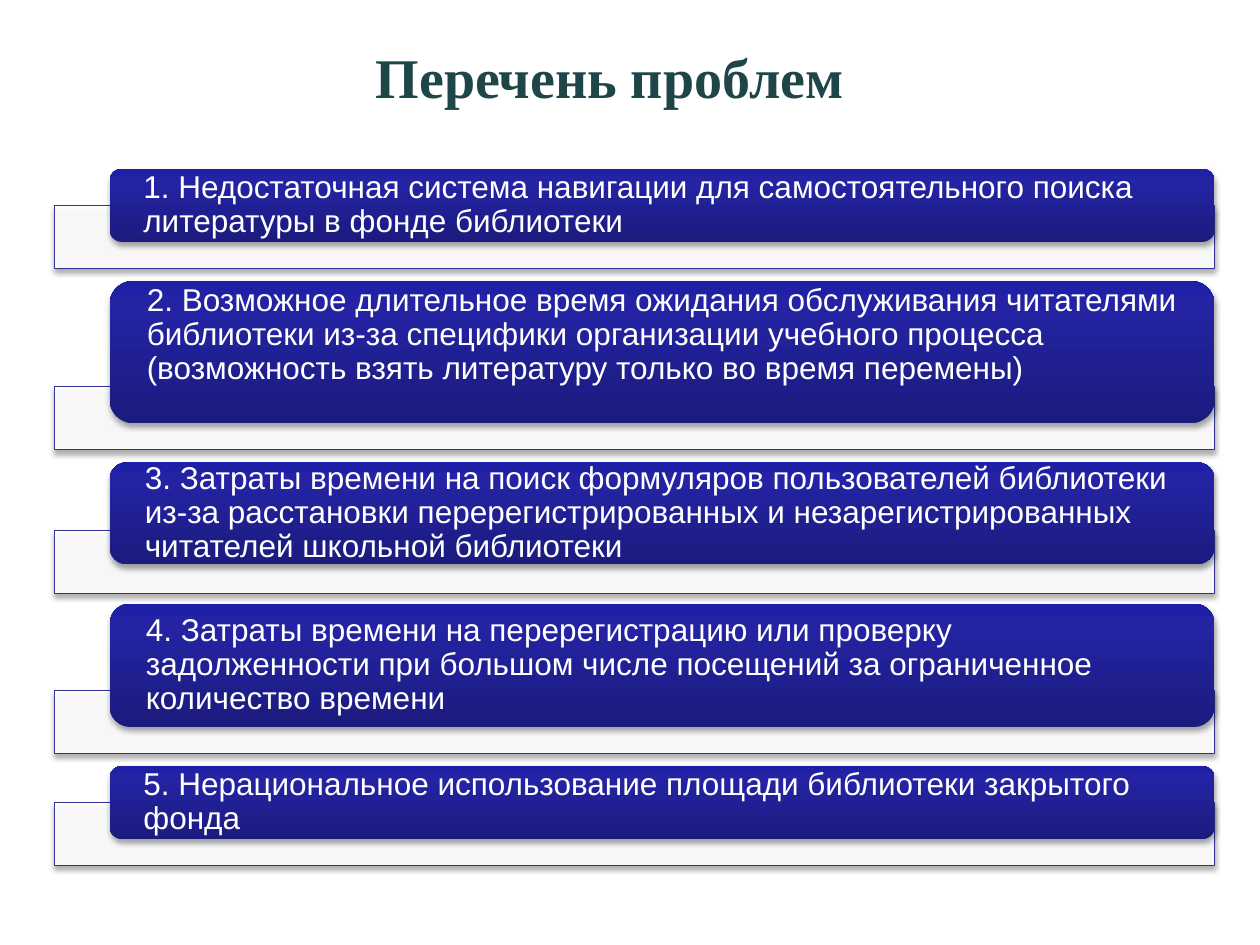
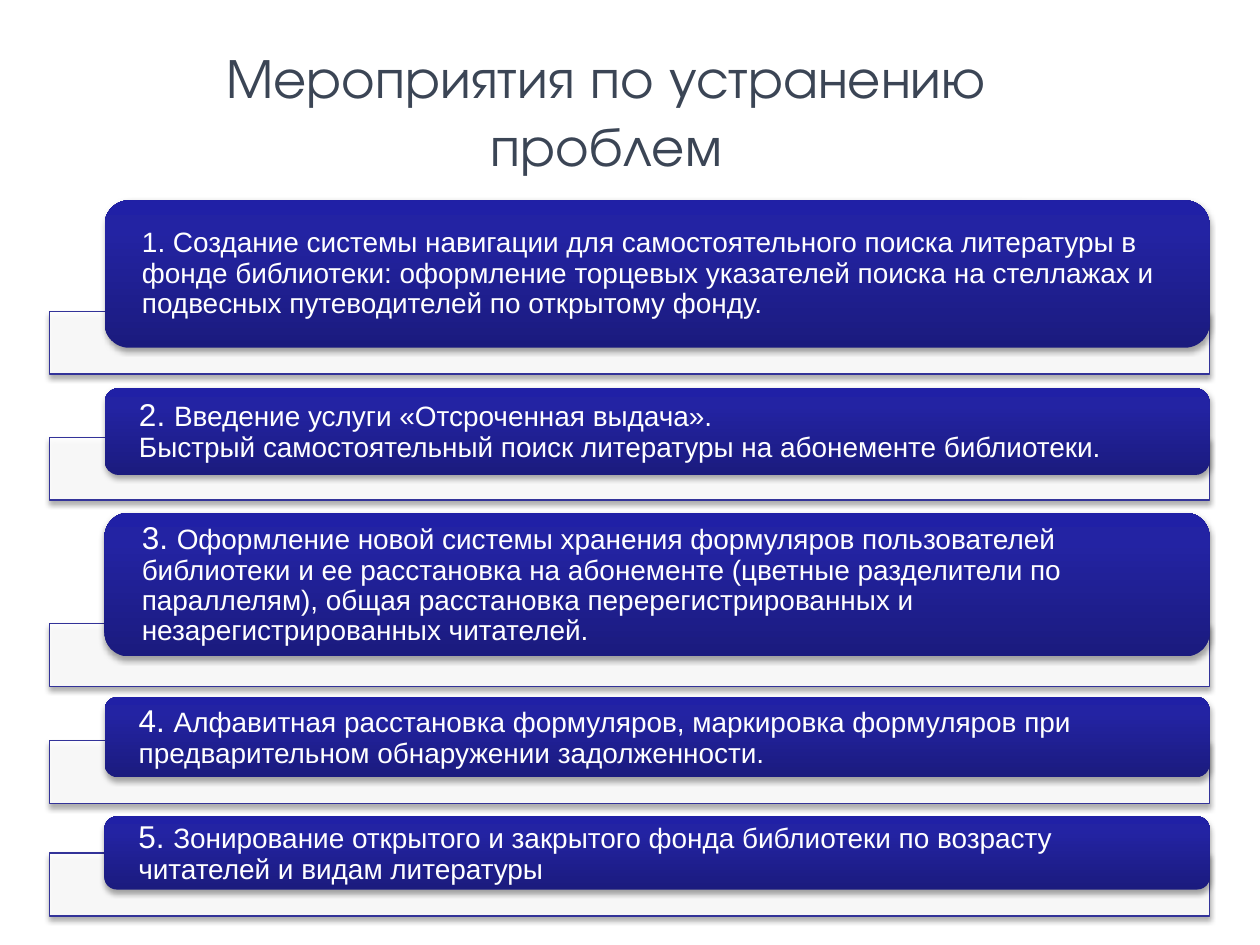
from copy import deepcopy
from dataclasses import dataclass
from typing import Any

from lxml.etree import SubElement
from pptx import Presentation
from pptx.dml.color import RGBColor
from pptx.enum.shapes import MSO_SHAPE
from pptx.enum.text import MSO_ANCHOR, MSO_AUTO_SIZE, PP_ALIGN
from pptx.oxml.ns import qn
from pptx.util import Inches, Pt

WHITE = "FFFFFF"
EDGE = "333399"
STOPS = ((0, "1B1B7E"), (0.8, "2323A3"), (1, "2020A6"))
INDENT = 0.44
BOX_WIDTH = 8.77
BAR_WIDTH = 9.21
BAR_HEIGHT = 0.5

TITLE_FRAME = {
    "word_wrap": True,
    "auto_size": MSO_AUTO_SIZE.NONE,
    "vertical_anchor": MSO_ANCHOR.TOP,
}
BOX_FRAME = {
    "word_wrap": True,
    "vertical_anchor": MSO_ANCHOR.MIDDLE,
    "margin_left": Inches(0.24),
    "margin_right": Inches(0.24),
    "margin_top": Inches(0),
}


@dataclass
class Item:
    top: float
    height: float
    text: str
    lap: float = 0.29
    foot: float = 0
    lead: str = ""


@dataclass
class Page:
    title: str
    spot: tuple[float, float, float, float]
    font: dict[str, Any]
    color: str
    left: float
    size: int
    items: list[Item]


PAGES = [
    Page(
        "Перечень проблем",
        (1.06, 0.29, 7.56, 1.04),
        {"name": "Times New Roman", "size": Pt(32), "bold": True},
        "1E4649",
        0.43,
        18,
        [
            Item(1.34, 0.58, "1. Недостаточная система навигации для самостоятельного "
                 "поиска литературы в фонде библиотеки"),
            Item(2.23, 1.13, "2. Возможное длительное время ожидания обслуживания "
                 "читателями библиотеки из-за специфики организации учебного процесса "
                 "(возможность взять литературу только во время перемены)", foot=0.27),
            Item(3.67, 0.81, "3. Затраты времени на поиск формуляров пользователей "
                 "библиотеки из-за расстановки перерегистрированных и "
                 "незарегистрированных читателей школьной библиотеки", lap=0.27),
            Item(4.79, 0.98, "4. Затраты времени на перерегистрацию или проверку "
                 "задолженности при большом числе посещений за ограниченное "
                 "количество времени"),
            Item(6.08, 0.58, "5. Нерациональное использование площади библиотеки "
                 "закрытого фонда"),
        ],
    ),
    Page(
        "Мероприятия по устранению проблем",
        (0.91, 0.29, 7.81, 0.64),
        {"name": "TeX Gyre Adventor", "size": Pt(32), "bold": False},
        "3B4555",
        0.39,
        16,
        [
            Item(1.59, 1.17, "1. Создание системы навигации для самостоятельного "
                 "поиска литературы в фонде библиотеки: оформление торцевых указателей "
                 "поиска на стеллажах и подвесных путеводителей по открытому фонду."),
            Item(3.08, 0.69, "Введение услуги «Отсроченная выдача».\n"
                 "Быстрый самостоятельный поиск литературы на абонементе библиотеки.",
                 lap=0.3, lead="2. "),
            Item(4.07, 1.14, "Оформление новой системы хранения формуляров "
                 "пользователей библиотеки и ее расстановка на абонементе (цветные "
                 "разделители по параллелям), общая расстановка перерегистрированных и "
                 "незарегистрированных читателей.", lap=0.26, lead="3. "),
            Item(5.53, 0.64, "Алфавитная расстановка формуляров, маркировка формуляров "
                 "при предварительном обнаружении задолженности.", lead="4. "),
            Item(6.48, 0.58, "Зонирование открытого и закрытого фонда библиотеки по "
                 "возрасту читателей и видам литературы", lead="5. "),
        ],
    ),
]


def apply(target: Any, values: dict[str, Any]) -> None:
    for name, value in values.items():
        setattr(target, name, value)


def paint(target: Any, color: str) -> None:
    target.rgb = RGBColor.from_string(color)


def place(slide: Any, kind: Any, spot: tuple[float, ...]) -> Any:
    shape = slide.shapes.add_shape(kind, *map(Inches, spot))
    shape.shadow.inherit = False
    return shape


def shade(shape: Any) -> None:
    effects = shape._element.spPr.find(qn("a:effectLst"))
    cast = SubElement(effects, qn("a:outerShdw"), blurRad="40000", dist="23000",
                      dir="5400000", rotWithShape="0")
    black = SubElement(cast, qn("a:srgbClr"), val="000000")
    SubElement(black, qn("a:alpha"), val="35000")


def blend(shape: Any) -> None:
    fill = shape.fill
    fill.gradient()
    fill.gradient_angle = 90
    stops = shape._element.spPr.find(qn("a:gradFill")).find(qn("a:gsLst"))
    stops.append(deepcopy(stops[-1]))
    for stop, (point, color) in zip(fill.gradient_stops, STOPS):
        stop.position = point
        paint(stop.color, color)


def draw_bar(slide: Any, left: float, top: float) -> None:
    bar = place(slide, MSO_SHAPE.RECTANGLE, (left, top, BAR_WIDTH, BAR_HEIGHT))
    bar.fill.solid()
    paint(bar.fill.fore_color, WHITE)
    tone = bar._element.spPr.find(qn("a:solidFill"))[0]
    SubElement(tone, qn("a:alpha"), val="90000")
    paint(bar.line.color, EDGE)
    bar.line.width = Pt(0.75)
    shade(bar)


def add_run(para: Any, text: str, size: int) -> None:
    run = para.add_run()
    run.text = text
    apply(run.font, {"name": "Arial", "size": Pt(size)})
    paint(run.font.color, WHITE)


def draw_box(slide: Any, left: float, item: Item, size: int) -> None:
    box = place(slide, MSO_SHAPE.ROUNDED_RECTANGLE,
                (left, item.top, BOX_WIDTH, item.height))
    blend(box)
    box.line.fill.background()
    shade(box)
    frame = box.text_frame
    apply(frame, BOX_FRAME | {"margin_bottom": Inches(item.foot)})
    for rank, text in enumerate(item.text.split("\n")):
        para = frame.add_paragraph() if rank else frame.paragraphs[0]
        apply(para, {"alignment": PP_ALIGN.LEFT, "line_spacing": 0.9})
        if item.lead and not rank:
            add_run(para, item.lead, 18)
        add_run(para, text, size)


def draw_title(slide: Any, page: Page) -> None:
    title = slide.shapes.title
    apply(title, dict(zip(("left", "top", "width", "height"), map(Inches, page.spot))))
    frame = title.text_frame
    frame.text = page.title
    apply(frame, TITLE_FRAME)
    para = frame.paragraphs[0]
    para.alignment = PP_ALIGN.CENTER
    font = para.runs[0].font
    apply(font, page.font)
    paint(font.color, page.color)


def main() -> None:
    deck = Presentation()
    apply(deck, {"slide_width": Inches(10), "slide_height": Inches(7.5)})
    for page in PAGES:
        slide = deck.slides.add_slide(deck.slide_layouts[5])
        draw_title(slide, page)
        for item in page.items:
            draw_bar(slide, page.left, item.top + item.height - item.lap)
            draw_box(slide, page.left + INDENT, item, page.size)
    deck.save("out.pptx")


if __name__ == "__main__":
    main()
